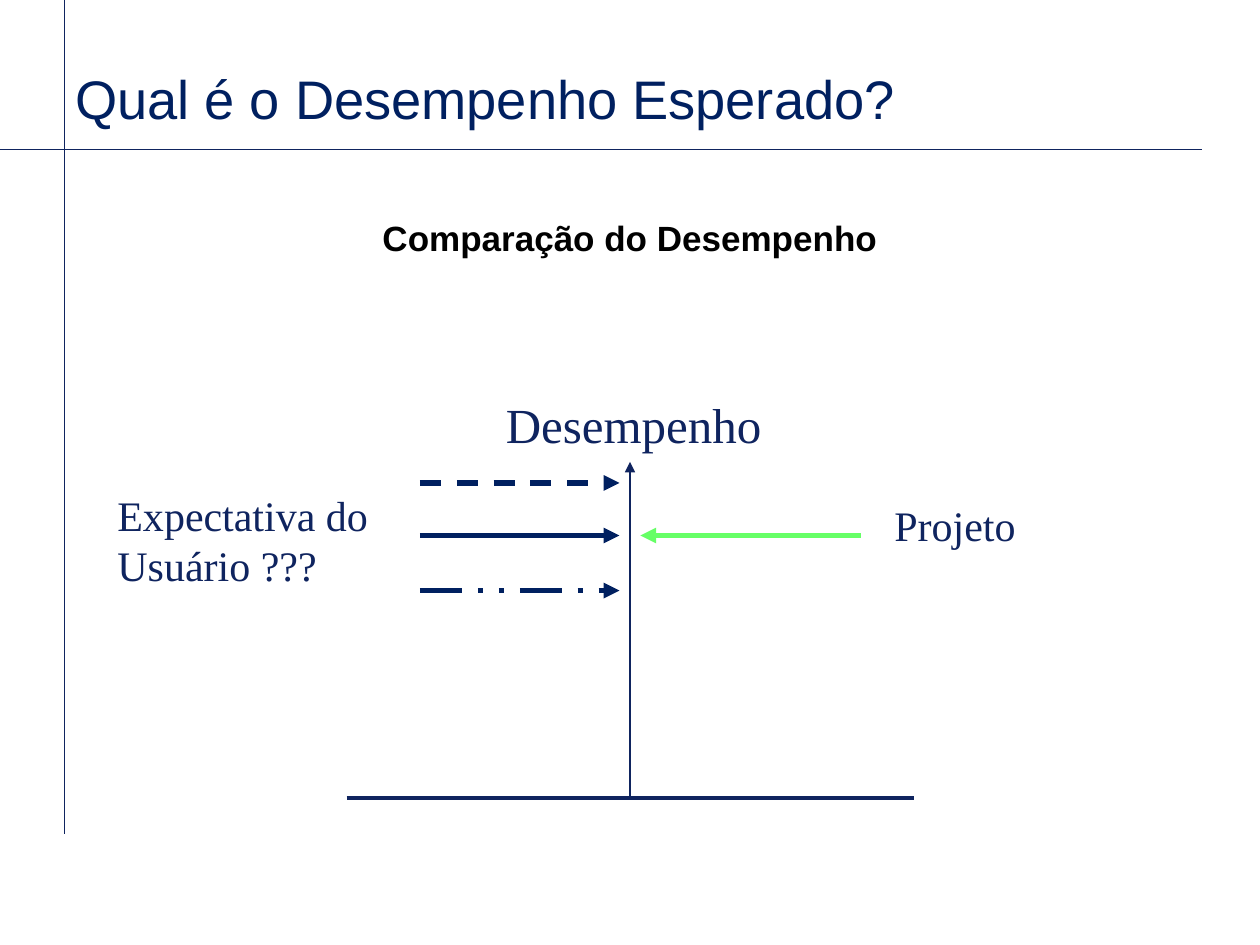
from dataclasses import dataclass

from lxml.etree import SubElement
from pptx import Presentation
from pptx.dml.color import RGBColor
from pptx.enum.dml import MSO_LINE
from pptx.enum.shapes import MSO_CONNECTOR
from pptx.enum.text import MSO_ANCHOR, MSO_AUTO_SIZE, PP_ALIGN
from pptx.oxml.ns import qn
from pptx.slide import Slide
from pptx.util import Inches, Pt

COLORS = {"ink": "0F245F", "navy": "002060", "black": "000000", "green": "66FF66"}
FORMATS = {
    "title": {"name": "Arial", "size": Pt(31), "color": "navy"},
    "subtitle": {"name": "Arial", "size": Pt(20), "bold": True, "color": "black"},
    "axis": {"name": "Times New Roman", "size": Pt(28), "color": "ink"},
    "label": {"name": "Times New Roman", "size": Pt(24), "color": "ink"},
}
UNIT = Inches(1) / 12  # the slide is a grid of 120 columns by 90 rows


def grid(*cells):
    return [round(cell * UNIT) for cell in cells]


@dataclass
class Deck:
    slide: Slide

    def line(self, start, end, color="ink", width=0.75, dash=None, arrow=False):
        connector = self.slide.shapes.add_connector(
            MSO_CONNECTOR.STRAIGHT, *grid(*start, *end))
        stroke = connector.line
        stroke.color.rgb = RGBColor.from_string(COLORS[color])
        stroke.width = Pt(width)
        if dash:
            stroke.dash_style = dash
        properties = connector._element.spPr
        if arrow:
            SubElement(properties.find(qn("a:ln")), qn("a:tailEnd"), type="triangle")
        SubElement(properties, qn("a:effectLst"))

    def text(self, words, box, style, align=PP_ALIGN.LEFT, anchor=MSO_ANCHOR.TOP,
             spacing=None, fit=MSO_AUTO_SIZE.NONE):
        frame = self.slide.shapes.add_textbox(*grid(*box)).text_frame
        frame_format = {"word_wrap": True, "auto_size": fit, "vertical_anchor": anchor}
        for name, value in frame_format.items():
            setattr(frame, name, value)
        paragraph = frame.paragraphs[0]
        paragraph.alignment = align
        paragraph.line_spacing = spacing
        run = paragraph.add_run()
        run.text = words
        for name, value in FORMATS[style].items():
            if name == "color":
                run.font.color.rgb = RGBColor.from_string(COLORS[value])
            else:
                setattr(run.font, name, value)

    def label(self, words, box, style="label"):
        self.text(words, box, style, fit=MSO_AUTO_SIZE.SHAPE_TO_FIT_TEXT)


def main():
    presentation = Presentation()
    presentation.slide_width, presentation.slide_height = grid(120, 90)
    deck = Deck(presentation.slides.add_slide(presentation.slide_layouts[6]))

    # Frame rules and headings
    deck.line((6.15, 79.4), (6.15, 0))
    deck.line((0, 14.25), (114.5, 14.25))
    deck.text("Qual é o Desempenho Esperado?", (6, 3, 102, 10), "title",
              anchor=MSO_ANCHOR.BOTTOM, spacing=0.85)
    deck.text("Comparação do Desempenho", (9, 20, 102, 57), "subtitle",
              align=PP_ALIGN.CENTER)

    # Performance axis on its base
    axis, base = 60, 76
    deck.line((axis - 27, base), (axis + 27, base), width=2.25)
    deck.line((axis, base), (axis, 44), arrow=True)
    deck.label("Desempenho", (47, 37, 27, 6.8), "axis")

    # User expectations on the left, project on the right
    expectations = {46: MSO_LINE.DASH, 51: None, 56.25: MSO_LINE.DASH_DOT_DOT}
    for row, dash in expectations.items():
        deck.line((40, row), (axis - 1, row), "navy", 3, dash, arrow=True)
    deck.line((82, 51), (axis + 1, 51), "green", 3, arrow=True)
    deck.label("Expectativa do Usuário ???", (10, 46, 30, 10.8))
    deck.label("Projeto", (84, 47, 20, 6))

    presentation.save("out.pptx")


if __name__ == "__main__":
    main()
